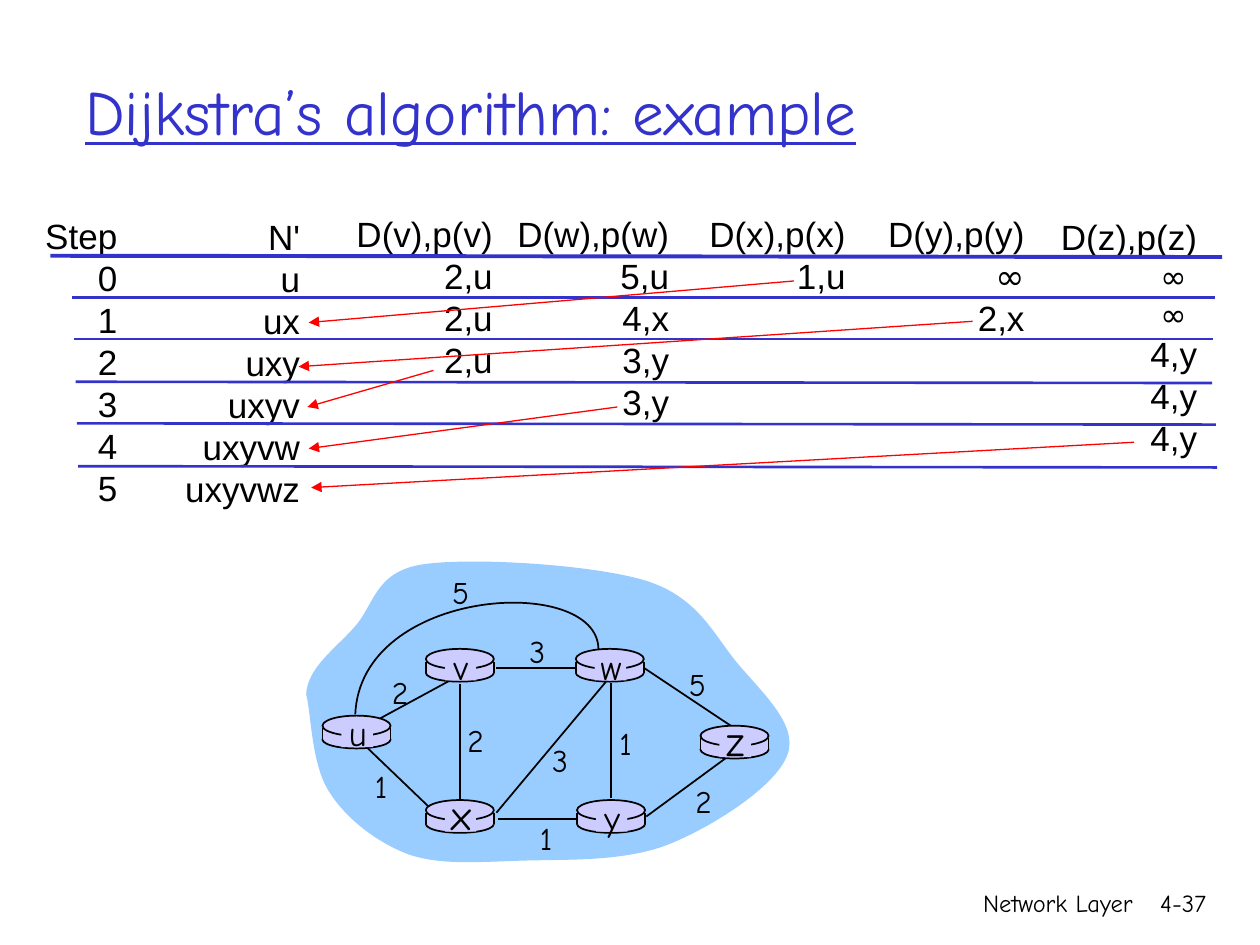
"""Build a slide that steps through Dijkstra's algorithm on a six-router network."""
from lxml.etree import SubElement
from pptx import Presentation
from pptx.dml.color import RGBColor
from pptx.enum.shapes import MSO_CONNECTOR as Connector, MSO_SHAPE as Shape
from pptx.enum.text import MSO_ANCHOR as Anchor, MSO_AUTO_SIZE as AutoSize, PP_ALIGN as Align
from pptx.oxml.ns import qn
from pptx.util import Pt

PX = 9144
SANS, COMIC = "Arial", "Comic Neue"
COLORS = {"blue": "3333CC", "cloud": "99CCFF", "router": "CCCCFF", "black": "000000", "red": "FF0000"}

TITLE = "Dijkstra’s algorithm: example"
FOOTERS = [("Network Layer", (592, 700, 317, 50)), ("4-37", (893, 700, 74, 50))]
COLUMNS = [
    ((26, 165, 77, 243), ["Step", "0", "1", "2", "3", "4", "5"]),
    ((137, 166, 111, 243), ["N'", "u", "ux", "uxy", "uxyv", "uxyvw", "uxyvwz"]),
    ((273, 164, 128, 143), ["D(v),p(v)", "2,u", "2,u", "2,u"]),
    ((397, 164, 144, 177), ["D(w),p(w)", "5,u", "4,x", "3,y", "3,y"]),
    ((553, 164, 128, 77), ["D(x),p(x)", "1,u"]),
    ((695, 164, 128, 110), ["D(y),p(y)", "∞", "2,x"]),
    ((832, 166, 128, 203), ["D(z),p(z)", "∞ ", "∞ ", "4,y", "4,y", "4,y"]),
]
HEADER_RULE = (40, 203, 970, 204)
ROW_RULES = [(57, 236, 964, 236), (59, 269, 963, 269), (60, 303, 962, 304),
             (61, 336, 965, 337), (62, 370, 966, 371)]
CHOICES = [(630, 223, 245, 256), (772, 255, 237, 291), (344, 294, 244, 323),
           (490, 323, 245, 356), (900, 351, 247, 387)]

CLOUD = [(243, 551), (244, 530), (266, 515), (281, 498), (297, 481), (297, 454), (335, 448),
         (374, 442), (471, 448), (513, 461), (554, 474), (566, 503), (585, 526),
         (604, 549), (634, 575), (625, 599), (616, 624), (566, 656), (531, 670),
         (496, 684), (450, 682), (416, 683), (381, 684), (350, 687), (324, 678),
         (298, 668), (274, 649), (261, 628), (247, 606), (247, 566), (243, 551)]
LONG_LINK = [(475, 515), (474, 455), (286, 466), (282, 567)]
LINKS = [(302, 570, 361, 538), (485, 542, 485, 633), (365, 543, 365, 636),
         (394, 645, 481, 541), (513, 648, 577, 601), (458, 650, 395, 650),
         (340, 640, 292, 594), (457, 530, 394, 530), (580, 576, 511, 530)]
COSTS = [("2", 300, 529), ("2", 360, 567), ("1", 285, 604), ("3", 427, 583), ("1", 416, 645),
         ("1", 479, 570), ("2", 541, 616), ("5", 536, 523), ("3", 409, 497), ("5", 348, 450)]
ROUTERS = [("u", 256, 568, 20), ("x", 338, 635, 24), ("v", 338, 515, 20),
           ("w", 457, 515, 20), ("y", 458, 635, 20), ("z", 556, 576, 24)]
ROUTER_WIDTH = 54


def color(name):
    return RGBColor.from_string(COLORS[name])


def add_text(page, frame, lines, align=Align.RIGHT, wrap=False, anchor=Anchor.TOP):
    """Write lines of (text, size, font) and return the paragraphs."""
    box = page.shapes.add_textbox(*(PX * length for length in frame)).text_frame
    box.word_wrap = wrap
    box.auto_size = AutoSize.NONE if wrap else AutoSize.SHAPE_TO_FIT_TEXT
    box.vertical_anchor = anchor
    for number, (text, size, font) in enumerate(lines):
        para = box.add_paragraph() if number else box.paragraphs[0]
        para.alignment = align
        span = para.add_run()
        span.text = text
        span.font.size, span.font.name = Pt(size), font
        span.font.color.rgb = color("black")
    return box.paragraphs


def add_line(page, ends, ink="black", width=1, arrow=False):
    """Draw a straight line, with an arrowhead at its end on request."""
    line = page.shapes.add_connector(Connector.STRAIGHT, *(PX * length for length in ends))
    line.line.color.rgb, line.line.width = color(ink), Pt(width)
    if arrow:
        SubElement(line.line._get_or_add_ln(), qn("a:tailEnd"), type="triangle")
    SubElement(line._element.spPr, qn("a:effectLst"))


def paint(shape, fill=None, outlined=False):
    """Give a shape its fill and outline."""
    shape.shadow.inherit = False
    if fill:
        shape.fill.solid()
        shape.fill.fore_color.rgb = color(fill)
    else:
        shape.fill.background()
    if outlined:
        shape.line.color.rgb, shape.line.width = color("black"), Pt(1)
    else:
        shape.line.fill.background()


def add_part(page, kind, frame, outlined=False):
    """Add one router-coloured preset shape."""
    paint(page.shapes.add_shape(kind, *(PX * length for length in frame)), "router", outlined)


def add_curve(page, points, **style):
    """Draw cubic curves through a start point and triples of points."""
    builder = page.shapes.build_freeform(*points[0], scale=PX)
    builder.add_line_segments(points[1:], close=False)
    shape = builder.convert_to_shape()
    outline = shape._element.xpath(".//a:path")[0]
    steps = outline.findall(qn("a:lnTo"))
    for start in range(0, len(steps), 3):
        curve = SubElement(outline, qn("a:cubicBezTo"))
        for step in steps[start:start + 3]:
            curve.append(step[0])
            outline.remove(step)
    paint(shape, **style)


def add_router(page, x, y):
    """Draw a router as a flat cylinder."""
    add_part(page, Shape.OVAL, (x, y + 12, ROUTER_WIDTH, 14), True)
    add_part(page, Shape.RECTANGLE, (x, y + 10, ROUTER_WIDTH, 9))
    for side in (x, x + ROUTER_WIDTH):
        add_line(page, (side, y + 10, side, y + 19))
    add_part(page, Shape.OVAL, (x, y, ROUTER_WIDTH, 16), True)


def add_table_text(page):
    """Write the step columns and the rules between the rows."""
    styles = {"∞": (20, COMIC), "∞ ": (18, COMIC)}
    for frame, cells in COLUMNS:
        add_text(page, frame, [(cell, *styles.get(cell, (20, SANS))) for cell in cells])
    add_line(page, HEADER_RULE, "blue", 2.25)
    for rule in ROW_RULES:
        add_line(page, rule, "blue", 1.5)


def add_network(page):
    """Draw the cloud, the links, the routers and their labels."""
    add_curve(page, CLOUD, fill="cloud")
    for link in LINKS:
        add_line(page, link)
    add_curve(page, LONG_LINK, outlined=True)
    for name, x, y, size in ROUTERS:
        add_router(page, x, y)
        add_part(page, Shape.RECTANGLE, (x + 15, y + 2, 25, 23))
        top, height = (y - 8, 43) if size == 20 else (y - 14, 50)
        add_text(page, (x + 8, top, 40, height), [(name, size, COMIC)], Align.CENTER)
    for cost, x, y in COSTS:
        add_text(page, (x, y, 35, 40), [(cost, 18, COMIC)], Align.CENTER)


def main():
    deck = Presentation()
    deck.slide_width, deck.slide_height = 1000 * PX, 750 * PX
    page = deck.slides.add_slide(deck.slide_layouts[6])
    for text, frame in FOOTERS:
        add_text(page, frame, [(text, 14, COMIC)], wrap=True)
    title = add_text(page, (58, 25, 850, 125), [(TITLE, 36, COMIC)], Align.LEFT, True, Anchor.MIDDLE)
    title[0].runs[0].font.underline = True
    title[0].runs[0].font.color.rgb = color("blue")
    add_table_text(page)
    add_network(page)
    for choice in CHOICES:
        add_line(page, choice, "red", 0.75, arrow=True)
    deck.save("out.pptx")


if __name__ == "__main__":
    main()
